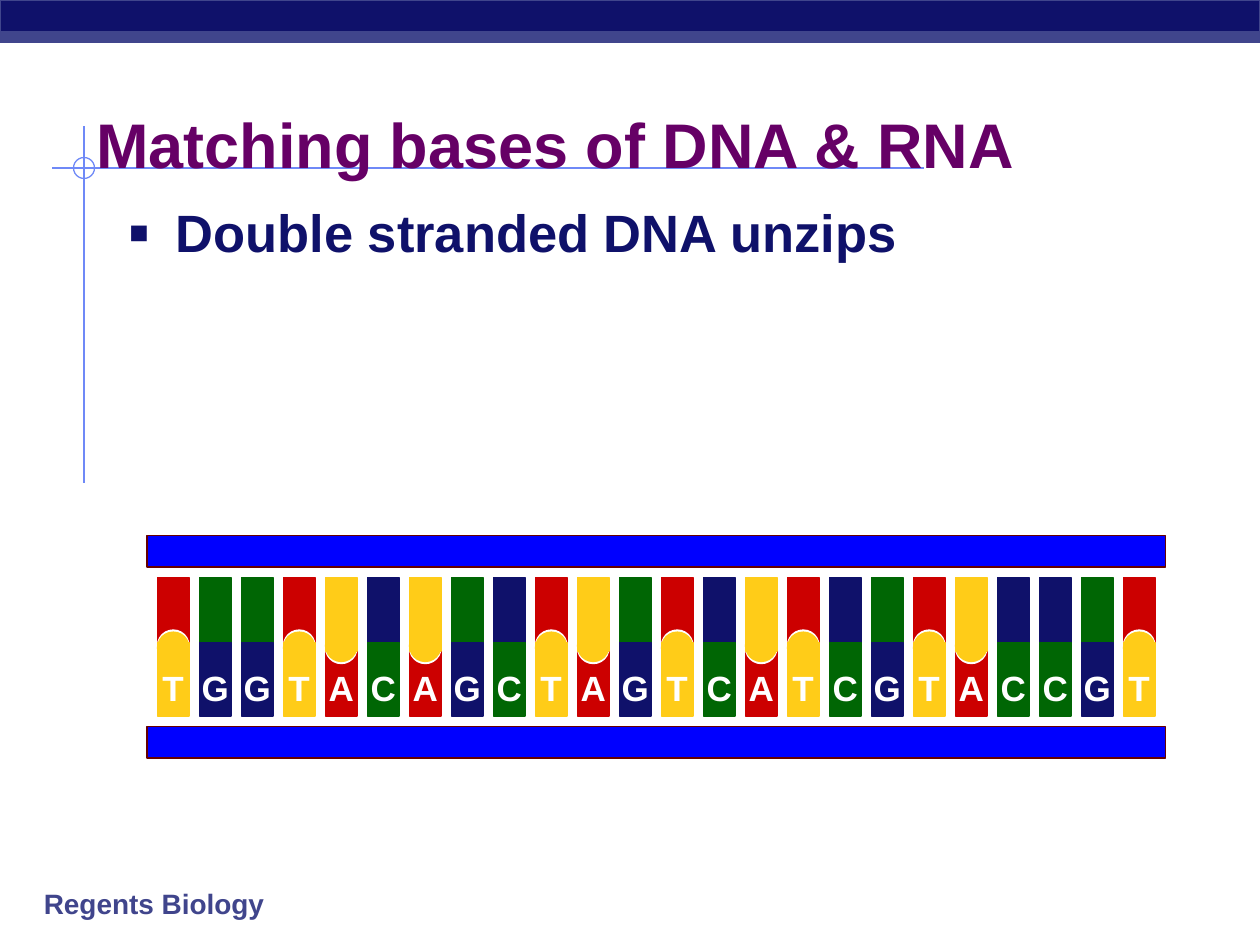
from lxml import etree
from pptx import Presentation, util as u
from pptx.dml import color
from pptx.enum import shapes, text
from pptx.oxml import ns

# The slide is a grid of 120 columns by 90 rows, twelve to the inch
CELL = u.Inches(1) / 12
NAVY, SLATE, SKY, PLUM, WHITE = "0F116A", "40458C", "6F89F7", "660066", "FFFFFF"
RED, GREEN, YELLOW, BLUE, MAROON = "CC0000", "006604", "FFCC18", "0000FF", "660000"
RECT, OVAL = shapes.MSO_SHAPE.RECTANGLE, shapes.MSO_SHAPE.OVAL

STRAND = "TGGTACAGCTAGTCATCGTACCGT"
PARTNER = {"A": "T", "T": "A", "C": "G", "G": "C"}
BASE_COLOR = {"A": RED, "T": YELLOW, "C": GREEN, "G": NAVY}


def cells(*lengths):
    return [u.Emu(round(n * CELL)) for n in lengths]


def rgb(hex_code):
    return color.RGBColor.from_string(hex_code)


def add_block(parent, kind, box, fill, line):
    block = parent.add_shape(kind, *cells(*box))
    block.shadow.inherit = False
    if fill:
        block.fill.solid()
        block.fill.fore_color.rgb = rgb(fill)
    else:
        block.fill.background()
    block.line.color.rgb = rgb(line)
    block.line.width = u.Pt(0.75)


def add_rule(slide, start, end):
    rule = slide.shapes.add_connector(
        shapes.MSO_CONNECTOR.STRAIGHT, *cells(*start, *end))
    rule.line.color.rgb = rgb(SKY)
    rule.line.width = u.Pt(1)
    etree.SubElement(rule._element.spPr, ns.qn("a:effectLst"))


def add_text(slide, words, box, size, ink, anchor="TOP", align="LEFT",
             wrap=True, top_inset=0.05, bullet=None):
    label = slide.shapes.add_textbox(*cells(*box))
    frame = label.text_frame
    frame.word_wrap = wrap
    frame.margin_top = u.Inches(top_inset)
    frame.vertical_anchor = text.MSO_ANCHOR[anchor]
    line = frame.paragraphs[0]
    line.alignment = text.PP_ALIGN[align]
    run = line.add_run()
    run.text = words
    run.font.name, run.font.size, run.font.bold = "Arial", u.Pt(size), True
    run.font.color.rgb = rgb(ink)
    if bullet:
        props = line._p.get_or_add_pPr()
        indent = u.Inches(0.38)
        props.set("marL", str(indent))
        props.set("indent", str(-indent))
        tint = etree.SubElement(props, ns.qn("a:buClr"))
        etree.SubElement(tint, ns.qn("a:srgbClr"), val=ink)
        etree.SubElement(props, ns.qn("a:buSzPct"), val="120000")
        etree.SubElement(props, ns.qn("a:buFont"), typeface="Arial")
        etree.SubElement(props, ns.qn("a:buChar"), char=bullet)


def draw_banner(slide, left, top, width, height):
    add_block(slide.shapes, RECT, (left, top, width, height), NAVY, SLATE)
    add_block(slide.shapes, RECT, (left, top + height * 0.75, width, height / 4),
              SLATE, SLATE)


def draw_crosshair(slide, left, top, width, height):
    across, down = left + 3, top + 4
    add_rule(slide, (left, down), (left + width, down))
    add_rule(slide, (across, top), (across, top + height))
    add_block(slide.shapes, OVAL, (across - 1, down - 1, 2, 2), None, SKY)


def draw_heading(slide, left, top, width, height):
    add_text(slide, "Matching bases of DNA & RNA", (left, top, width, 10), 36, PLUM,
             top_inset=0.09)
    add_text(slide, "Double stranded DNA unzips",
             (left + 3, top + 9, width - 1, height - 9), 30, NAVY,
             top_inset=0.09, bullet="▪")


def draw_base(slide, base, left, top, end_top):
    """One half of a pair: A has a white socket, T a round knob, C and G are flat."""
    fill = BASE_COLOR[base]
    if base in "CG":
        add_block(slide.shapes, RECT, (left, top, 3, 7), fill, fill)
        return
    half = slide.shapes.add_group_shape().shapes
    end_fill = WHITE if base == "A" else fill
    add_block(half, RECT, (left, top, 3, 7), fill, fill)
    add_block(half, OVAL, (left, end_top, 3, 3), end_fill, end_fill)


def draw_dna(slide, left, top, width, height):
    # Backbones
    for rail_top in (top, top + height - 3):
        add_block(slide.shapes, RECT, (left, rail_top, width, 3), BLUE, MAROON)
    # Base pairs: the socket lies behind the knob that fills it
    pitch = (width - 1) / len(STRAND)
    lower_top = top + height - 11
    for index, base in enumerate(STRAND):
        column = left + 1 + index * pitch
        halves = [(PARTNER[base], column, top + 4, top + 9),
                  (base, column, lower_top, lower_top - 1)]
        if base == "A":
            halves.reverse()
        for half in halves:
            draw_base(slide, *half)
        add_text(slide, base, (column - 1, top + 11.9, 5, 5.2), 20, WHITE,
                 anchor="MIDDLE", align="CENTER", wrap=False)


def main():
    deck = Presentation()
    deck.slide_width, deck.slide_height = cells(120, 90)
    slide = deck.slides.add_slide(deck.slide_layouts[6])
    draw_crosshair(slide, 5, 12, 83, 34)
    draw_banner(slide, 0, 0, 120, 4)
    add_text(slide, "Regents Biology", (3, 83.8, 24, 4.4), 16, SLATE, anchor="MIDDLE")
    draw_heading(slide, 8, 9, 102, 37)
    draw_dna(slide, 14, 51, 97, 21.2)
    deck.save("out.pptx")


if __name__ == "__main__":
    main()
